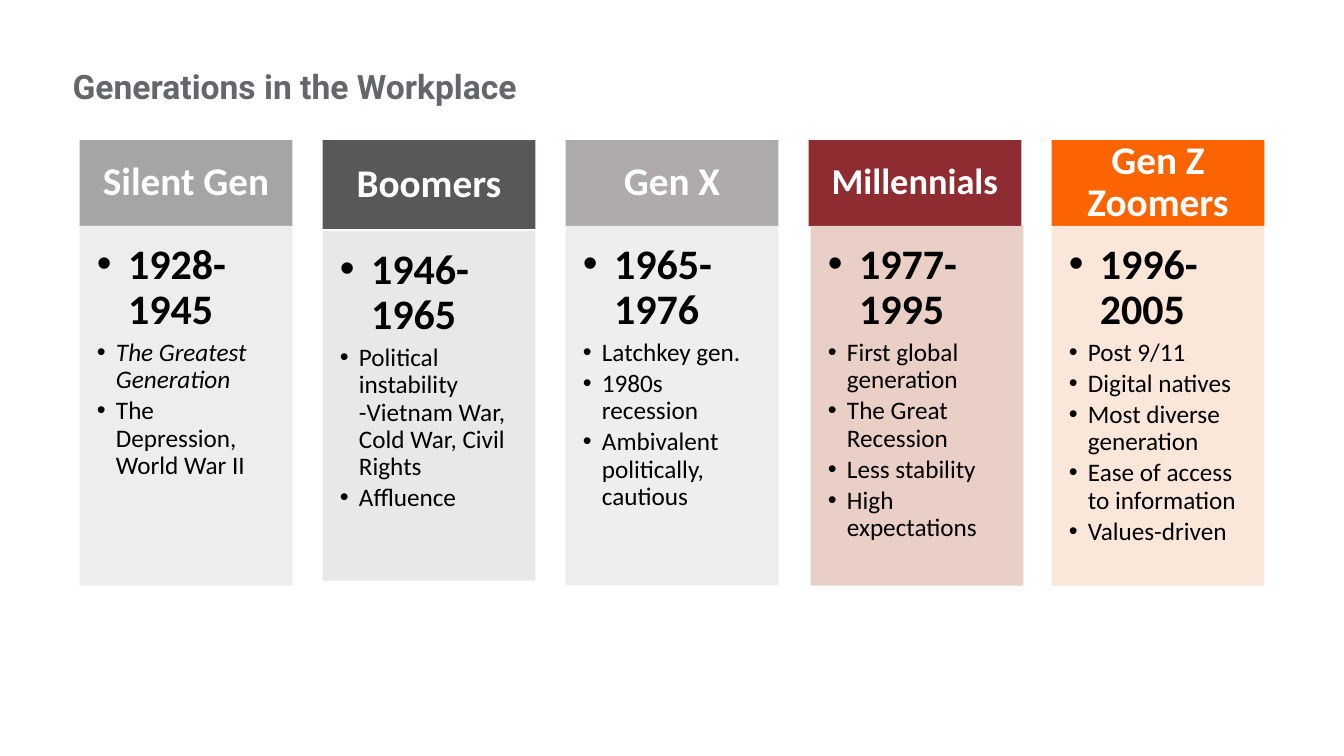
"""Build the slide on generations in the workplace."""
from dataclasses import dataclass

from lxml import etree
from pptx import Presentation
from pptx import util as u
from pptx.dml.color import RGBColor
from pptx.enum import shapes, text
from pptx.oxml import ns

COLUMN_LEFT, COLUMN_STEP, COLUMN_WIDTH, COLUMN_TOP = 0.79, 2.41, 2.11, 1.39


@dataclass
class Generation:
    name: str
    years: str
    traits: list[str]
    header_fill: str
    body_fill: str
    body_alpha: int = 90
    header_height: float = 0.85
    header_size: int = 28
    header_inset: float = 0.22
    body_top: float = 2.24
    body_height: float = 3.57
    body_shift: float = 0
    italic_trait: str = ""


GENERATIONS = [
    Generation("Silent Gen", "1928-1945",
               ["The Greatest Generation", "The Depression, World War II"],
               "A5A5A5", "EDEDED", body_alpha=100,
               italic_trait="The Greatest Generation"),
    Generation("Boomers", "1946-1965",
               ["Political instability\v-Vietnam War, Cold War, Civil Rights", "Affluence"],
               "595758", "E7E6E6", header_height=0.88, body_top=2.29, body_height=3.47),
    Generation("Gen X", "1965-1976",
               ["Latchkey gen.", "1980s recession", "Ambivalent politically, cautious"],
               "AFABAB", "EDEDED"),
    Generation("Millennials", "1977-1995",
               ["First global generation", "The Great Recession", "Less stability",
                "High expectations"],
               "8E2C31", "E7CABF", header_size=26, header_inset=0.2, body_shift=0.02),
    Generation("Gen Z Zoomers", "1996-2005",
               ["Post 9/11", "Digital natives", "Most diverse generation",
                "Ease of access to information", "Values-driven"],
               "FB6400", "FBE5D6"),
]


def set_colour(colour_format, value: str) -> None:
    colour_format.rgb = RGBColor.from_string(value)


def write(para, words: str, *, size: float, colour: str, font: str = "Calibri",
          bold: bool = False, italic: bool = False, align=text.PP_ALIGN.LEFT,
          after: float = 0, bullet_indent: float = 0) -> None:
    para.text = words
    para.alignment = align
    para.line_spacing = 0.9
    para.space_before = u.Pt(0)
    para.space_after = u.Pt(after)
    if bullet_indent:
        para.level = 1
        props = para._p.get_or_add_pPr()
        props.set("marL", str(u.Inches(bullet_indent)))
        props.set("indent", str(-u.Inches(bullet_indent)))
        etree.SubElement(props, ns.qn("a:buFont")).set("typeface", "Arial")
        etree.SubElement(props, ns.qn("a:buChar")).set("char", "•")
    for span in para.runs:
        span.font.name = font
        span.font.size = u.Pt(size)
        span.font.bold = bold
        span.font.italic = italic
        set_colour(span.font.color, colour)


def add_box(page, left: float, top: float, height: float, fill: str,
            insets: tuple[float, float, float, float], anchor, alpha: int = 100):
    box = page.shapes.add_shape(shapes.MSO_SHAPE.RECTANGLE, u.Inches(left), u.Inches(top),
                                u.Inches(COLUMN_WIDTH), u.Inches(height))
    box.shadow.inherit = False
    box.line.fill.background()
    box.fill.solid()
    set_colour(box.fill.fore_color, fill)
    if alpha < 100:
        colour = box._element.spPr.find(ns.qn("a:solidFill"))[0]
        etree.SubElement(colour, ns.qn("a:alpha")).set("val", str(alpha * 1000))
    frame = box.text_frame
    frame.word_wrap = True
    frame.vertical_anchor = anchor
    (frame.margin_left, frame.margin_top,
     frame.margin_right, frame.margin_bottom) = map(u.Inches, insets)
    return frame


def add_generation(page, generation: Generation, left: float) -> None:
    side = generation.header_inset
    header = add_box(page, left, COLUMN_TOP, generation.header_height,
                     generation.header_fill, (side, 0.12, side, 0.12),
                     text.MSO_ANCHOR.MIDDLE)
    write(header.paragraphs[0], generation.name, size=generation.header_size,
          colour="FFFFFF", bold=True, align=text.PP_ALIGN.CENTER)
    body = add_box(page, left + generation.body_shift, generation.body_top,
                   generation.body_height, generation.body_fill,
                   (0.17, 0.17, 0.23, 0.26), text.MSO_ANCHOR.TOP, generation.body_alpha)
    write(body.paragraphs[0], generation.years, size=30, colour="000000", bold=True,
          after=4.5, bullet_indent=0.31)
    for trait in generation.traits:
        write(body.add_paragraph(), trait, size=18, colour="000000",
              italic=trait == generation.italic_trait, after=2.7, bullet_indent=0.19)


def add_title(page, words: str) -> None:
    title = page.shapes.title
    title.left, title.top = u.Inches(0.62), u.Inches(0.65)
    title.width, title.height = u.Inches(11.5), u.Inches(0.46)
    frame = title.text_frame
    frame.auto_size = text.MSO_AUTO_SIZE.NONE
    frame.vertical_anchor = text.MSO_ANCHOR.TOP
    write(frame.paragraphs[0], words, size=24, colour="63666A", font="Roboto", bold=True)


def main() -> None:
    deck = Presentation()
    deck.slide_width, deck.slide_height = u.Inches(13.33), u.Inches(7.5)
    page = deck.slides.add_slide(deck.slide_layouts.get_by_name("Title Only"))
    add_title(page, "Generations in the Workplace")
    for index, generation in enumerate(GENERATIONS):
        add_generation(page, generation, COLUMN_LEFT + index * COLUMN_STEP)
    deck.save("out.pptx")


if __name__ == "__main__":
    main()
